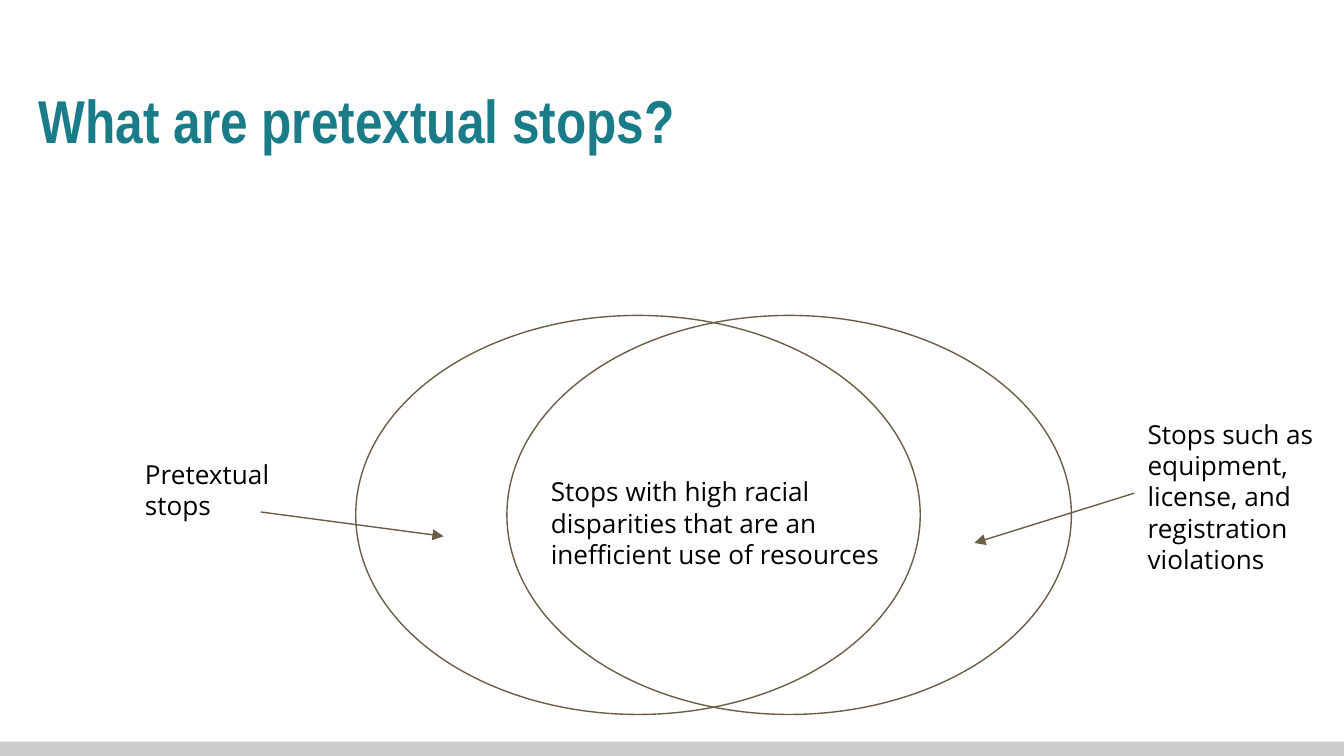
from lxml import etree
from pptx import Presentation
from pptx.dml.color import RGBColor
from pptx.enum.shapes import MSO_CONNECTOR, MSO_SHAPE
from pptx.enum.text import MSO_ANCHOR
from pptx.oxml.ns import qn
from pptx.util import Pt

RECTANGLE, OVAL = MSO_SHAPE.RECTANGLE, MSO_SHAPE.OVAL
STRAIGHT = MSO_CONNECTOR.STRAIGHT
TOP, MIDDLE = MSO_ANCHOR.TOP, MSO_ANCHOR.MIDDLE

# Content: text and box (left, top, width, height), in points
TITLE = ("What are pretextual stops?", (13.7, 36, 671, 55.4))
LABELS = [
    ("Pretextual stops", (70.6, 238.3, 97.9, 48.2)),
    ("Stops such as equipment, license, and registration violations",
     (607.7, 216.7, 107.3, 99.4)),
    ("Stops with high racial disparities that are an inefficient use of resources",
     (288, 247.7, 200.2, 65.5)),
]
ARROWS = [((607.7, 264.2), (522, 290.9)), ((139.7, 274.3), (237.6, 287.3))]

# Layout and formats
SLIDE_WIDTH, SLIDE_HEIGHT = 720, 405
FOOTER_HEIGHT = 7.6
CIRCLE_LEFT, CIRCLE_TOP, CIRCLE_SHIFT = 190.6, 169, 81
CIRCLE_WIDTH, CIRCLE_HEIGHT = 302.4, 213.8
OUTLINE, FOOTER = "695D46", "CCCCCC"
TITLE_FONT = {"name": "Arial Narrow", "size": Pt(32.4), "bold": True}
LABEL_FONT = {"name": "Open Sans", "size": Pt(14)}


def rgb(value):
    return RGBColor.from_string(value)


def points(values):
    return [Pt(value) for value in values]


def set_outline(line):
    line.color.rgb = rgb(OUTLINE)
    line.width = Pt(0.75)


def add_text(slide, text, box, font, color, anchor):
    frame = slide.shapes.add_textbox(*points(box)).text_frame
    frame.word_wrap = True
    frame.vertical_anchor = anchor
    for side in ("left", "top", "right", "bottom"):
        setattr(frame, f"margin_{side}", Pt(7.2))
    run = frame.paragraphs[0].add_run()
    run.text = text
    for name, value in font.items():
        setattr(run.font, name, value)
    run.font.color.rgb = rgb(color)


def add_arrow(slide, start, end):
    arrow = slide.shapes.add_connector(STRAIGHT, *points(start + end))
    set_outline(arrow.line)
    etree.SubElement(arrow.line._get_or_add_ln(), qn("a:tailEnd"), type="triangle")
    etree.SubElement(arrow._element.spPr, qn("a:effectLst"))


def main():
    presentation = Presentation()
    presentation.slide_width = Pt(SLIDE_WIDTH)
    presentation.slide_height = Pt(SLIDE_HEIGHT)
    slide = presentation.slides.add_slide(presentation.slide_layouts[6])

    # Footer band
    band = slide.shapes.add_shape(RECTANGLE, *points(
        (0, SLIDE_HEIGHT - FOOTER_HEIGHT, SLIDE_WIDTH, FOOTER_HEIGHT)))
    band.shadow.inherit = False
    band.fill.solid()
    band.fill.fore_color.rgb = rgb(FOOTER)
    band.line.fill.background()

    add_text(slide, *TITLE, TITLE_FONT, "1A7C89", MIDDLE)

    # Overlapping circles
    for index in range(2):
        circle = slide.shapes.add_shape(OVAL, *points(
            (CIRCLE_LEFT + index * CIRCLE_SHIFT, CIRCLE_TOP, CIRCLE_WIDTH, CIRCLE_HEIGHT)))
        circle.shadow.inherit = False
        circle.fill.background()
        set_outline(circle.line)

    # Labels and their arrows
    for text, box in LABELS:
        add_text(slide, text, box, LABEL_FONT, "000000", TOP)
    for start, end in ARROWS:
        add_arrow(slide, start, end)

    presentation.save("out.pptx")


if __name__ == "__main__":
    main()
